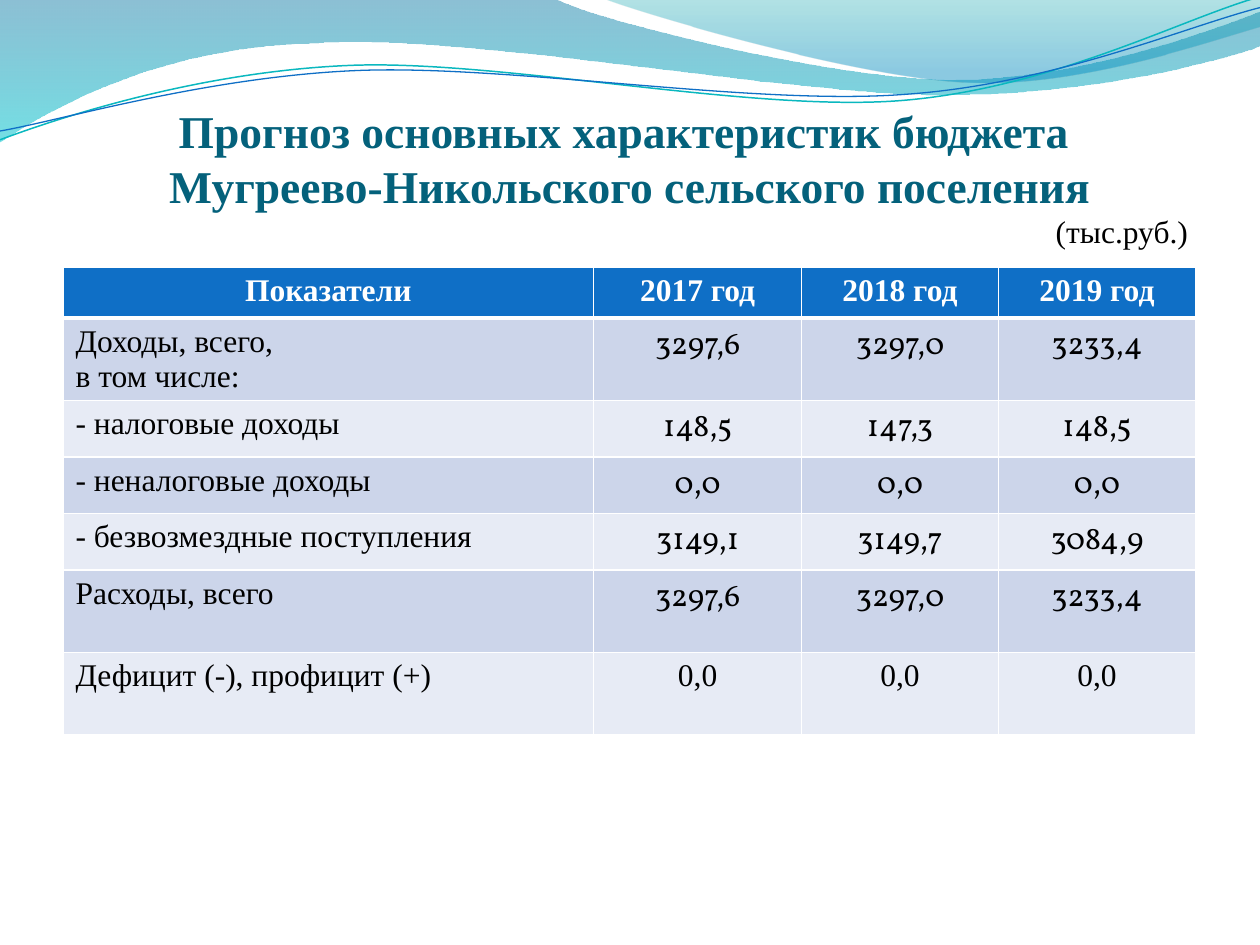
import math

from lxml import etree
from pptx import Presentation
from pptx.dml.color import RGBColor
from pptx.enum import text as t
from pptx.oxml import ns
from pptx.util import Cm, Pt

SERIF, BOOK = "Times New Roman", "Vollkorn"
TITLE = [  # text, size, bold, colour, alignment
    ("Прогноз основных характеристик бюджета ", 26, True, "04617B", t.PP_ALIGN.CENTER),
    ("Мугреево-Никольского сельского поселения", 26, True, "04617B", t.PP_ALIGN.CENTER),
    ("(тыс.руб.)", 18, False, "000000", t.PP_ALIGN.RIGHT),
]
ROWS = [
    ("Показатели", "2017 год", "2018 год", "2019 год"),
    ("Доходы, всего,\nв том числе:", "3297,6", "3297,0", "3233,4"),
    ("- налоговые доходы", "148,5", "147,3", "148,5"),
    ("- неналоговые доходы", "0,0", "0,0", "0,0"),
    ("- безвозмездные поступления", "3149,1", "3149,7", "3084,9"),
    ("Расходы, всего", "3297,6", "3297,0", "3233,4"),
    ("Дефицит (-), профицит (+)", "0,0", "0,0", "0,0"),
]
WIDTHS = [10.7, 4.19, 3.97, 3.97]
HEIGHTS = [1.03, 1.66, 1.14, 1.14, 1.14, 1.66, 1.66]

# Outlines in inches: a start point, then lines (x, y) and curves (two handles, end)
BANDS = [  # box, outline, gradient stops (position, colour, opacity)
    ((-0.01, -0.01, 10.02, 1.14),
     [(0, 0), (4.4, -0.01), (4.76, 0.17, 6.64, 0.63, 7.58, 0.63),
      (8.53, 0.63, 9.58, 0.26, 10, 0.09), (10.01, 0.36),
      (9.83, 0.44, 8.7, 0.76, 7.46, 0.75), (6.22, 0.75, 3.82, 0.28, 2.57, 0.34),
      (1.29, 0.36, 0.46, 0.83, -0.01, 1.13), (0, 0)],
     [(0, "0074A1", 45), (1, "00C6CF", 55)]),
    ((4.79, -0.01, 5.21, 0.7),
     [(4.79, -0.01), (5.09, 0.11, 6.82, 0.62, 7.69, 0.65),
      (8.56, 0.69, 9.61, 0.32, 10, 0.21), (10, 0), (4.79, -0.01)],
     [(0, "00A1A9", 30), (0.8, "008BBF", 45)]),
]
TILT = -2.7
WAVES = [  # box before tilting, outline as it shows, colour, width
    ((-0.02, 0.22, 10.02, 0.71),
     [(0, 1.11), (0.48, 0.93, 1.58, 0.57, 2.77, 0.52), (3.95, 0.47, 5.93, 0.89, 7.13, 0.8),
      (8.33, 0.71, 9.38, 0.15, 9.98, -0.02)], "0AB8BF", 0.85),
    ((-0.02, 0.3, 10.03, 0.58),
     [(0, 1.04), (0.47, 0.96, 1.64, 0.61, 2.83, 0.56), (4.03, 0.51, 5.97, 0.84, 7.17, 0.75),
      (8.36, 0.67, 9.41, 0.21, 10, 0.06)], "0F6FC6", 0.75),
]


def rgb(code):
    return RGBColor.from_string(code)


def inch(value):
    return Cm(2.54 * value)


def draw(shapes, box, parts, close, tilt=0):
    """Add a freeform in its box, with true curves, tilted about its middle."""
    left, top, width, height = box
    midx, midy = left + width / 2, top + height / 2
    cos, sin = math.cos(math.radians(-tilt)), math.sin(math.radians(-tilt))

    def local(x, y):
        dx, dy = x - midx, y - midy
        return inch(dx * cos - dy * sin + width / 2), inch(dx * sin + dy * cos + height / 2)

    pen = shapes.build_freeform(*local(*parts[0]))
    pen.add_line_segments([local(*part[-2:]) for part in parts[1:]], close=close)
    shape = pen.convert_to_shape()
    shape.left, shape.top, shape.width, shape.height = map(inch, box)
    shape.rotation = tilt
    shape.shadow.inherit = False

    track = next(shape.element.iter(ns.qn("a:path")))
    track.set("w", str(inch(width)))
    track.set("h", str(inch(height)))
    for step, part in zip(track, parts):
        if len(part) == 6:
            step.getparent().replace(step, etree.Element(ns.qn("a:cubicBezTo")))
    for step, part in zip(track, parts):
        for node in list(step):
            step.remove(node)
        for i in range(0, len(part), 2):
            x, y = local(*part[i:i + 2])
            etree.SubElement(step, ns.qn("a:pt"), x=str(x), y=str(y))
    return shape


def add_band(shapes, box, parts, stops):
    shape = draw(shapes, box, parts, True)
    shape.line.fill.background()
    shape.fill.gradient()
    shape.fill.gradient_angle = 270
    for stop, (pos, code, _) in zip(shape.fill.gradient_stops, stops):
        stop.position = pos
        stop.color.rgb = rgb(code)
    colours = shape.element.spPr.iter(ns.qn("a:srgbClr"))
    for node, (_, _, alpha) in zip(colours, stops):
        etree.SubElement(node, ns.qn("a:alpha"), val=str(alpha * 1000))


def add_wave(shapes, box, parts, code, width):
    shape = draw(shapes, box, parts, False, TILT)
    shape.fill.background()
    shape.line.color.rgb = rgb(code)
    shape.line.width = Pt(width)


def style(para, size, font, code, bold, align):
    para.alignment = align
    for run in para.runs:
        run.font.size, run.font.name, run.font.bold = Pt(size), font, bold
        run.font.color.rgb = rgb(code)


def edge(cell, side, width):
    line = etree.SubElement(cell._tc.get_or_add_tcPr(), ns.qn("a:ln" + side),
                            w=str(Pt(width)))
    fill = etree.SubElement(line, ns.qn("a:solidFill"))
    etree.SubElement(fill, ns.qn("a:srgbClr"), val="FFFFFF")


def set_title(title):
    title.left, title.top, title.width, title.height = Cm(1.27), Cm(1.96), Cm(22.86), Cm(3.18)
    frame = title.text_frame
    frame.word_wrap, frame.auto_size = True, t.MSO_AUTO_SIZE.NONE
    frame.vertical_anchor = t.MSO_ANCHOR.BOTTOM
    frame.margin_left = frame.margin_right = Cm(0.18)
    frame.margin_top, frame.margin_bottom = Cm(0.13), Cm(0.1)
    frame.text = "\n".join(row[0] for row in TITLE)
    for para, (_, size, bold, code, align) in zip(frame.paragraphs, TITLE):
        style(para, size, SERIF, code, bold, align)


def fill_cell(cell, words, r, c):
    head = r == 0
    for side in "LRTB":
        thick = (r, side) in ((0, "B"), (1, "T"))
        edge(cell, side, 3 if thick else 1)
    cell.fill.solid()
    cell.fill.fore_color.rgb = rgb("0F6FC6" if head else "CCD5EA" if r % 2 else "E7EBF5")
    cell.text_frame.text = words
    font = BOOK if c and 0 < r < len(ROWS) - 1 else SERIF
    align = t.PP_ALIGN.CENTER if head or c else t.PP_ALIGN.LEFT
    for para in cell.text_frame.paragraphs:
        style(para, 18, font, "FFFFFF" if head else "000000", head, align)


def add_grid(shapes):
    table = shapes.add_table(len(ROWS), len(WIDTHS), Cm(1.27), Cm(5.38),
                             Cm(sum(WIDTHS)), Cm(sum(HEIGHTS))).table
    for col, width in zip(table.columns, WIDTHS):
        col.width = Cm(width)
    for r, (row, height) in enumerate(zip(ROWS, HEIGHTS)):
        table.rows[r].height = Cm(height)
        for c, words in enumerate(row):
            fill_cell(table.cell(r, c), words, r, c)


def main():
    deck = Presentation()
    deck.slide_width, deck.slide_height = Cm(25.4), Cm(19.05)
    shapes = deck.slides.add_slide(deck.slide_layouts[5]).shapes
    for band in BANDS:
        add_band(shapes, *band)
    for wave in WAVES:
        add_wave(shapes, *wave)
    title = shapes.title
    title.element.getparent().append(title.element)  # in front of the waves
    set_title(title)
    add_grid(shapes)
    deck.save("out.pptx")


if __name__ == "__main__":
    main()
